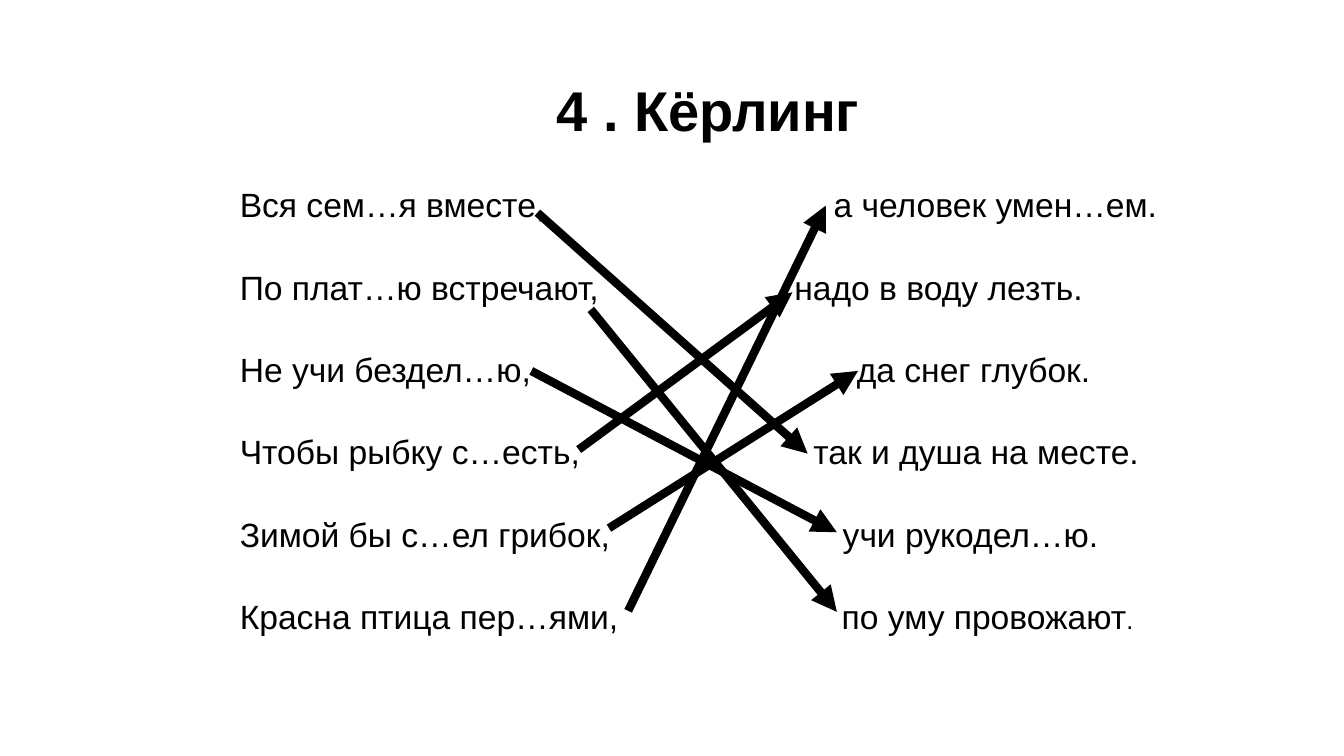
from lxml import etree
from pptx import Presentation
from pptx.dml.color import RGBColor
from pptx.enum.shapes import MSO_CONNECTOR
from pptx.enum.text import MSO_ANCHOR
from pptx.oxml.ns import qn
from pptx.util import Inches, Pt

STRAIGHT = MSO_CONNECTOR.STRAIGHT
MIDDLE = MSO_ANCHOR.MIDDLE
BLACK = RGBColor(0, 0, 0)
FONT = "Arial"
TEXT_LEFT = 2.38

PROVERBS = [
    ("Вся сем…я вместе,", "а человек умен…ем.", 8.27),
    ("По плат…ю встречают,", "надо в воду лезть.", 7.88),
    ("Не учи бездел…ю,", "да снег глубок.", 8.5),
    ("Чтобы рыбку с…есть,", "так и душа на месте.", 8.07),
    ("Зимой бы с…ел грибок,", "учи рукодел…ю.", 8.36),
    ("Красна птица пер…ями,", "по уму провожают", 8.35),
]

MATCHES = [
    ((5.33, 2.11), (8.01, 4.5)),
    ((5.86, 3.07), (8.3, 6.07)),
    ((5.27, 3.68), (8.3, 5.28)),
    ((5.74, 4.46), (7.86, 2.9)),
    ((6.04, 5.24), (8.51, 3.68)),
    ((6.23, 6.06), (8.19, 2.04)),
]


def add_text_frame(page, left, top, width, height):
    box = page.shapes.add_textbox(
        Inches(left), Inches(top), Inches(width), Inches(height))
    frame = box.text_frame
    frame.word_wrap = True
    frame.vertical_anchor = MIDDLE
    return frame


def style_font(para, size, bold=False):
    para.font.name = FONT
    para.font.size = Pt(size)
    para.font.bold = bold
    para.font.color.rgb = BLACK


def add_tab_stop(para, position):
    properties = para._p.get_or_add_pPr()
    stops = etree.Element(qn("a:tabLst"))
    etree.SubElement(stops, qn("a:tab"), pos=str(Inches(position)), algn="l")
    properties.find(qn("a:defRPr")).addprevious(stops)


def add_title(page):
    para = add_text_frame(page, 5.42, 0.7, 3.24, 0.77).paragraphs[0]
    para.text = "4 . Кёрлинг"
    style_font(para, 40, bold=True)


def add_proverbs(page):
    frame = add_text_frame(page, 2.28, 1.8, 9.36, 4.54)
    for index, (beginning, ending, ending_left) in enumerate(PROVERBS):
        para = frame.add_paragraph() if index else frame.paragraphs[0]
        para.add_run().text = f"{beginning}\t{ending}"
        para.space_before = Pt(30 if index else 0)
        style_font(para, 24)
        add_tab_stop(para, ending_left - TEXT_LEFT)
    full_stop = para.add_run()
    full_stop.text = "."
    full_stop.font.size = Pt(18)


def add_arrow(page, start, end):
    arrow = page.shapes.add_connector(
        STRAIGHT, *(Inches(value) for value in start + end))
    arrow.line.color.rgb = BLACK
    arrow.line.width = Pt(6)
    etree.SubElement(arrow.line._get_or_add_ln(), qn("a:tailEnd"), type="triangle")
    etree.SubElement(arrow._element.spPr, qn("a:effectLst"))


def main():
    deck = Presentation()
    deck.slide_width = Inches(13.33)
    deck.slide_height = Inches(7.5)
    page = deck.slides.add_slide(deck.slide_layouts[6])
    add_title(page)
    add_proverbs(page)
    for start, end in MATCHES:
        add_arrow(page, start, end)
    deck.save("out.pptx")


if __name__ == "__main__":
    main()
